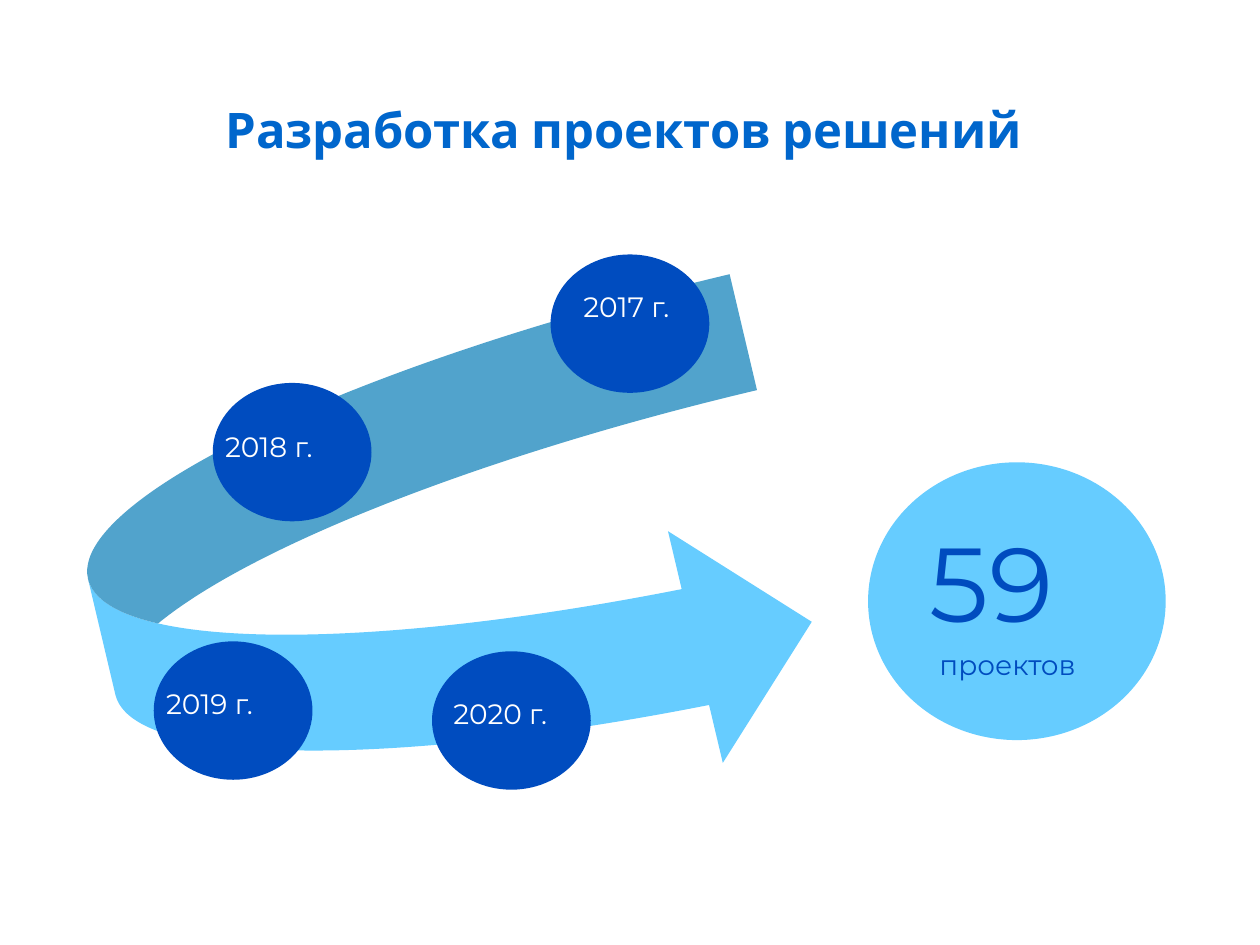
from dataclasses import dataclass

from pptx import Presentation
from pptx.dml.color import RGBColor
from pptx.enum.shapes import MSO_SHAPE
from pptx.enum.text import MSO_ANCHOR, PP_ALIGN
from pptx.util import Cm, Pt


@dataclass(frozen=True)
class Theme:
    title_color: RGBColor = RGBColor(0x00, 0x66, 0xCC)
    dark: RGBColor = RGBColor(0x00, 0x4C, 0xBF)
    light: RGBColor = RGBColor(0x66, 0xCC, 0xFF)
    white: RGBColor = RGBColor(0xFF, 0xFF, 0xFF)
    title_font: str = "Cabin"
    body_font: str = "Montserrat"
    title_size: Pt = Pt(28)
    label_size: Pt = Pt(16)
    number_size: Pt = Pt(60)


theme = Theme()


def add_filled_shape(kind, left, top, width, height, color):
    shape = slide.shapes.add_shape(kind, Cm(left), Cm(top), Cm(width), Cm(height))
    shape.shadow.inherit = False
    shape.fill.solid()
    shape.fill.fore_color.rgb = color
    shape.line.fill.background()
    return shape


def add_label(text, left, top, width, height, size, color):
    text_box = slide.shapes.add_textbox(Cm(left), Cm(top), Cm(width), Cm(height))
    text_box.text_frame.word_wrap = True
    paragraph = text_box.text_frame.paragraphs[0]
    paragraph.text = text
    paragraph.font.name = theme.body_font
    paragraph.font.size = size
    paragraph.font.color.rgb = color


presentation = Presentation()
presentation.slide_width = Cm(25.4)
presentation.slide_height = Cm(19.05)
slide = presentation.slides.add_slide(presentation.slide_layouts[5])

title = slide.shapes.title
title.left, title.top, title.width, title.height = Cm(4.29), Cm(0.74), Cm(18.8), Cm(2.57)
title.text_frame.vertical_anchor = MSO_ANCHOR.BOTTOM
paragraph = title.text_frame.paragraphs[0]
paragraph.text = "Разработка проектов решений"
paragraph.alignment = PP_ALIGN.LEFT
paragraph.font.name = theme.title_font
paragraph.font.size = theme.title_size
paragraph.font.bold = True
paragraph.font.color.rgb = theme.title_color

arrow = add_filled_shape(MSO_SHAPE.CURVED_RIGHT_ARROW, 2, 7.01, 14, 9.6, theme.light)
arrow.rotation = 346.7

milestones = [
    ("2017 г.", 11.1, 5.13, 11.51, 5.72),
    ("2018 г.", 4.29, 7.72, 4.29, 8.53),
    ("2019 г.", 3.1, 12.93, 3.1, 13.72),
    ("2020 г.", 8.71, 13.13, 8.89, 13.92),
]
for year, left, top, label_left, label_top in milestones:
    add_filled_shape(MSO_SHAPE.OVAL, left, top, 3.2, 2.79, theme.dark)
    add_label(year, label_left, label_top, 3.2, 0.94, theme.label_size, theme.white)

add_filled_shape(MSO_SHAPE.OVAL, 17.5, 9.32, 6, 5.6, theme.light)
add_label("59", 18.49, 10.31, 4, 2.82, theme.number_size, theme.dark)
add_label("проектов", 18.69, 12.93, 3.81, 0.94, theme.label_size, theme.dark)

presentation.save("out.pptx")
